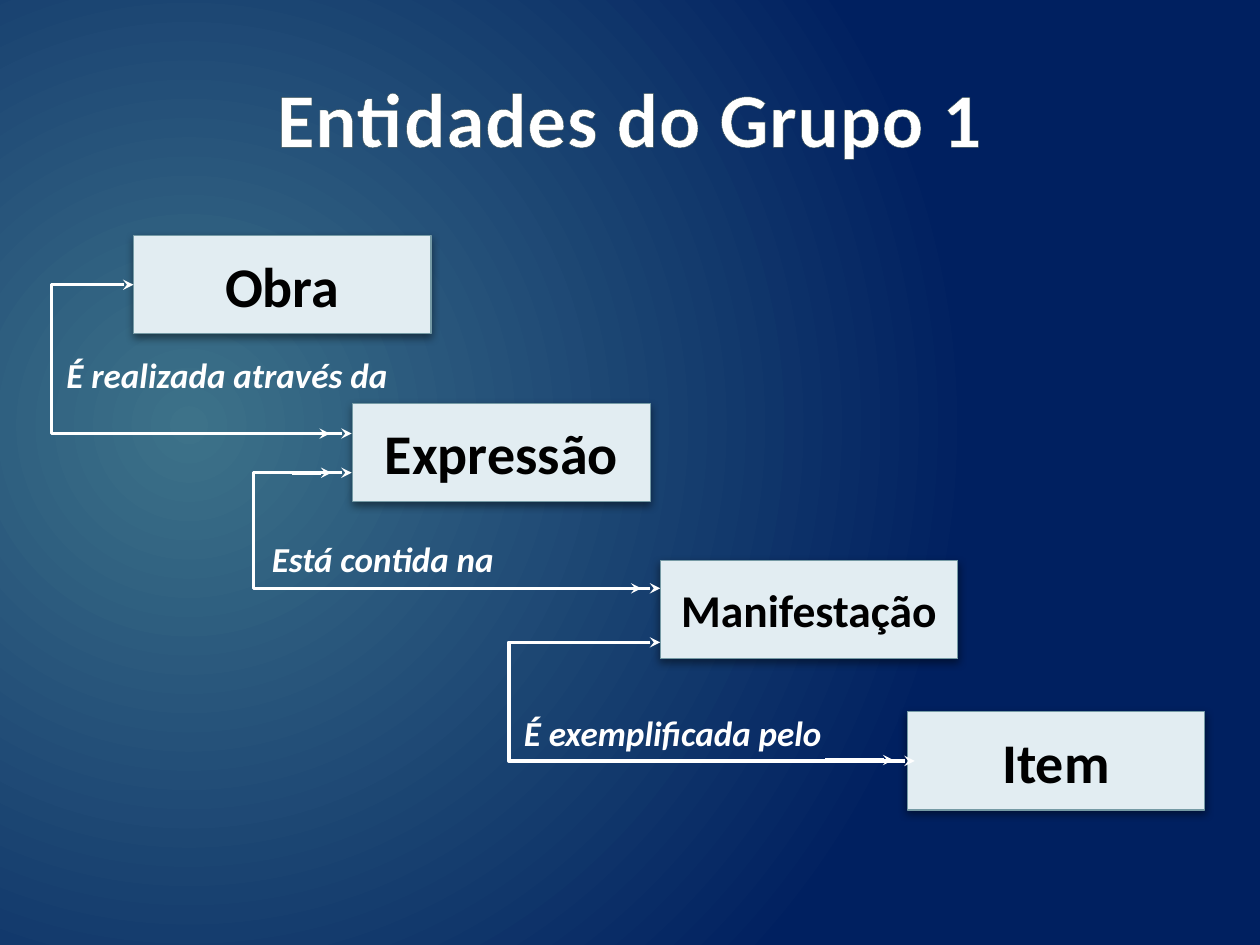
from dataclasses import dataclass

from lxml.etree import SubElement
from pptx import Presentation
from pptx.dml.color import RGBColor
from pptx.enum.shapes import MSO_CONNECTOR, MSO_SHAPE
from pptx.enum.text import MSO_ANCHOR, PP_ALIGN
from pptx.oxml.ns import qn
from pptx.util import Cm, Pt


@dataclass(frozen=True)
class Theme:
    font: str = "Calibri"
    glow: str = "3D7289"
    navy: str = "002060"
    light: str = "FFFFFF"
    dark: str = "000000"
    box: str = "E2EDF2"
    border: str = "759AA5"
    title_edge: str = "384F55"
    title_size: int = 44
    box_size: int = 32
    long_box_size: int = 26
    label_size: int = 20


def rgb(value):
    return RGBColor.from_string(value)


def add(parent, tag, **attrs):
    return SubElement(parent, qn(tag), {k: str(v) for k, v in attrs.items()})


class Deck:
    def __init__(self, theme):
        self.t = theme
        self.prs = Presentation()
        self.prs.slide_width, self.prs.slide_height = Cm(25.4), Cm(19.05)
        self.s = self.prs.slides.add_slide(self.prs.slide_layouts[6])

    def background(self):
        fill = self.s.background.fill
        fill.gradient()
        for stop, color in zip(fill.gradient_stops, (self.t.glow, self.t.navy)):
            stop.color.rgb = rgb(color)
        grad = self.s.element.find(".//" + qn("a:gradFill"))
        grad.remove(grad.find(qn("a:lin")))
        circle = add(grad, "a:path", path="circle")
        add(circle, "a:fillToRect", l=15000, t=50000, r=85000, b=60000)

    def run(self, tf, text, size, color, align=PP_ALIGN.LEFT, italic=False):
        p = tf.paragraphs[0]
        p.alignment = align
        r = p.add_run()
        r.text = text
        f = r.font
        f.name, f.size, f.bold, f.italic = self.t.font, Pt(size), True, italic
        f.color.rgb = rgb(color)
        return r

    def title(self, text, x, y, w, h):
        tf = self.s.shapes.add_textbox(Cm(x), Cm(y), Cm(w), Cm(h)).text_frame
        tf.word_wrap = True
        tf.vertical_anchor = MSO_ANCHOR.MIDDLE
        r = self.run(tf, text, self.t.title_size, self.t.light, PP_ALIGN.CENTER)
        # Letter spacing and a thin edge around the letters
        rPr = r.font._element
        rPr.set("spc", "50")
        ln = add(rPr, "a:ln", w=Pt(1.05))
        add(add(ln, "a:solidFill"), "a:srgbClr", val=self.t.title_edge)
        rPr.insert(0, ln)

    def label(self, text, x, y, w, h=1.12):
        tf = self.s.shapes.add_textbox(Cm(x), Cm(y), Cm(w), Cm(h)).text_frame
        tf.word_wrap = False
        self.run(tf, text, self.t.label_size, self.t.light, italic=True)

    def box(self, text, x, y, size, w=6, h=1.98):
        sp = self.s.shapes.add_shape(MSO_SHAPE.RECTANGLE, Cm(x), Cm(y), Cm(w), Cm(h))
        sp.fill.solid()
        sp.fill.fore_color.rgb = rgb(self.t.box)
        sp.line.color.rgb = rgb(self.t.border)
        sp.line.width = Pt(0.75)
        # Soft shadow straight below
        sp.shadow.inherit = False
        effects = sp._element.spPr.find(qn("a:effectLst"))
        shadow = add(effects, "a:outerShdw", blurRad=Pt(5), dist=Pt(2),
                     dir=5400000, rotWithShape=0)
        add(add(shadow, "a:srgbClr", val=self.t.dark), "a:alpha", val=43000)
        tf = sp.text_frame
        tf.word_wrap = True
        tf.vertical_anchor = MSO_ANCHOR.MIDDLE
        self.run(tf, text, size, self.t.dark, PP_ALIGN.CENTER)

    def arrow(self, x1, y1, x2, y2, kind=MSO_CONNECTOR.STRAIGHT, ends=("tailEnd",)):
        c = self.s.shapes.add_connector(kind, Cm(x1), Cm(y1), Cm(x2), Cm(y2))
        c.line.color.rgb = rgb(self.t.light)
        c.line.width = Pt(2)
        spPr = c._element.spPr
        for end in ends:
            add(spPr.find(qn("a:ln")), "a:" + end, type="stealth")
        add(spPr, "a:effectLst")
        return c

    def elbow(self, x1, y1, x2, y2, bend_x):
        c = self.arrow(x1, y1, x2, y2, MSO_CONNECTOR.ELBOW, ("headEnd", "tailEnd"))
        geom = c._element.spPr.find(qn("a:prstGeom"))
        for old in geom.findall(qn("a:avLst")):
            geom.remove(old)
        adj = round((bend_x - x1) / (x2 - x1) * 100000)
        add(add(geom, "a:avLst"), "a:gd", name="adj1", fmla=f"val {adj}")


def main():
    t = Theme()
    d = Deck(t)
    d.background()
    d.title("Entidades do Grupo 1", 1.27, 0.76, 22.86, 3.18)

    # Entities, stepping down to the right
    for text, x, y, size in (
        ("Obra", 2.69, 4.75, t.box_size),
        ("Expressão", 7.11, 8.13, t.box_size),
        ("Manifestação", 13.31, 11.3, t.long_box_size),
        ("Item", 18.29, 14.35, t.box_size),
    ):
        d.box(text, x, y, size)

    # Two-way relations between neighbouring entities
    for ends in (
        (2.69, 5.74, 7.09, 8.74, 1.04),
        (7.09, 9.53, 13.31, 11.86, 5.11),
        (13.31, 12.95, 18.44, 15.34, 10.26),
    ):
        d.elbow(*ends)

    # Second arrowheads, marking the "many" ends
    for x1, x2, y in (
        (5.08, 6.65, 8.74),
        (5.89, 6.68, 9.53),
        (11.35, 12.93, 11.86),
        (16.64, 18.01, 15.32),
    ):
        d.arrow(x1, y, x2, y)

    # Relation names
    d.label("É realizada através da", 1.09, 7.01, 7.11)
    d.label("Está contida na", 5.23, 10.72, 5)
    d.label("É exemplificada pelo", 10.31, 14.22, 6.55)

    d.prs.save("out.pptx")


if __name__ == "__main__":
    main()
